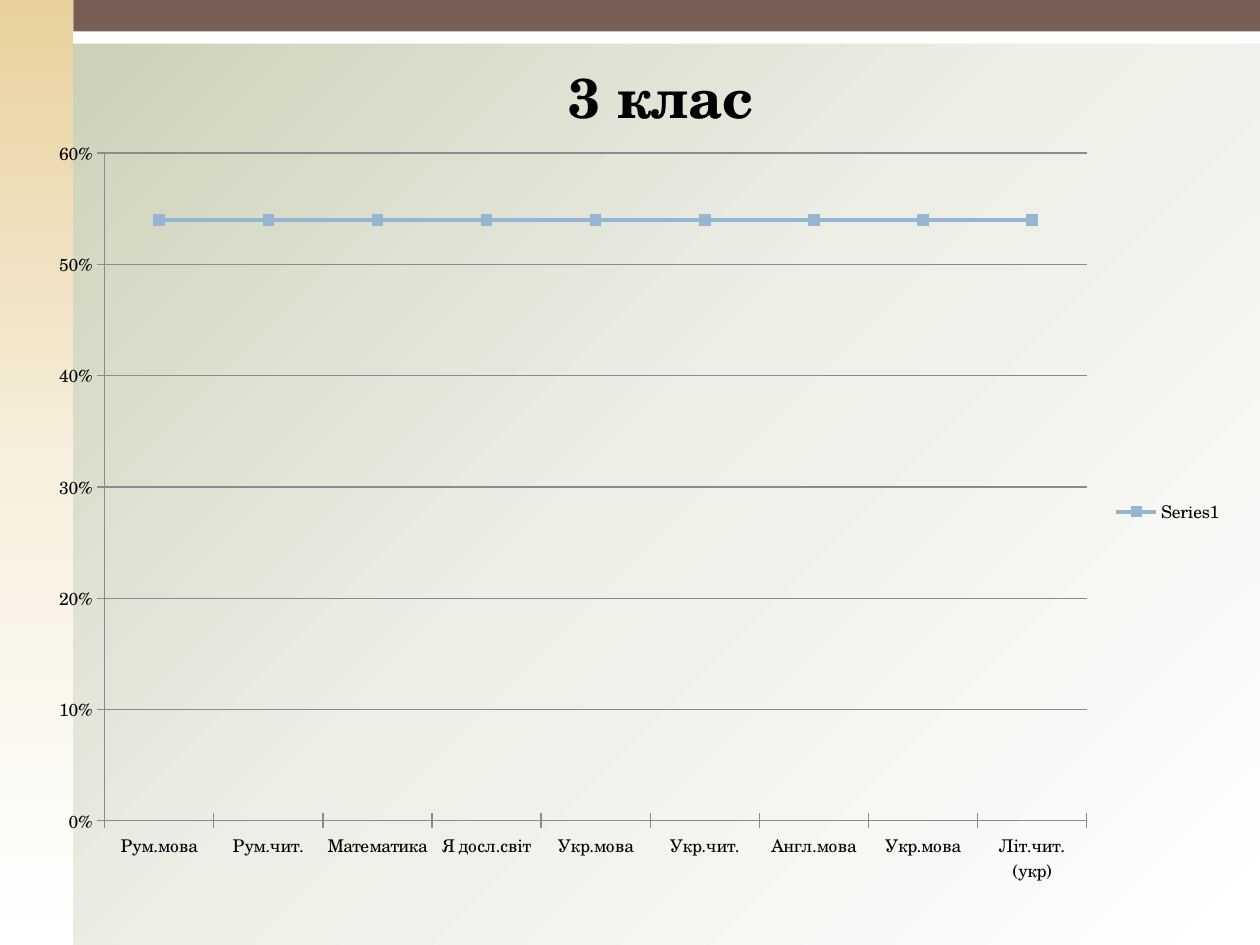
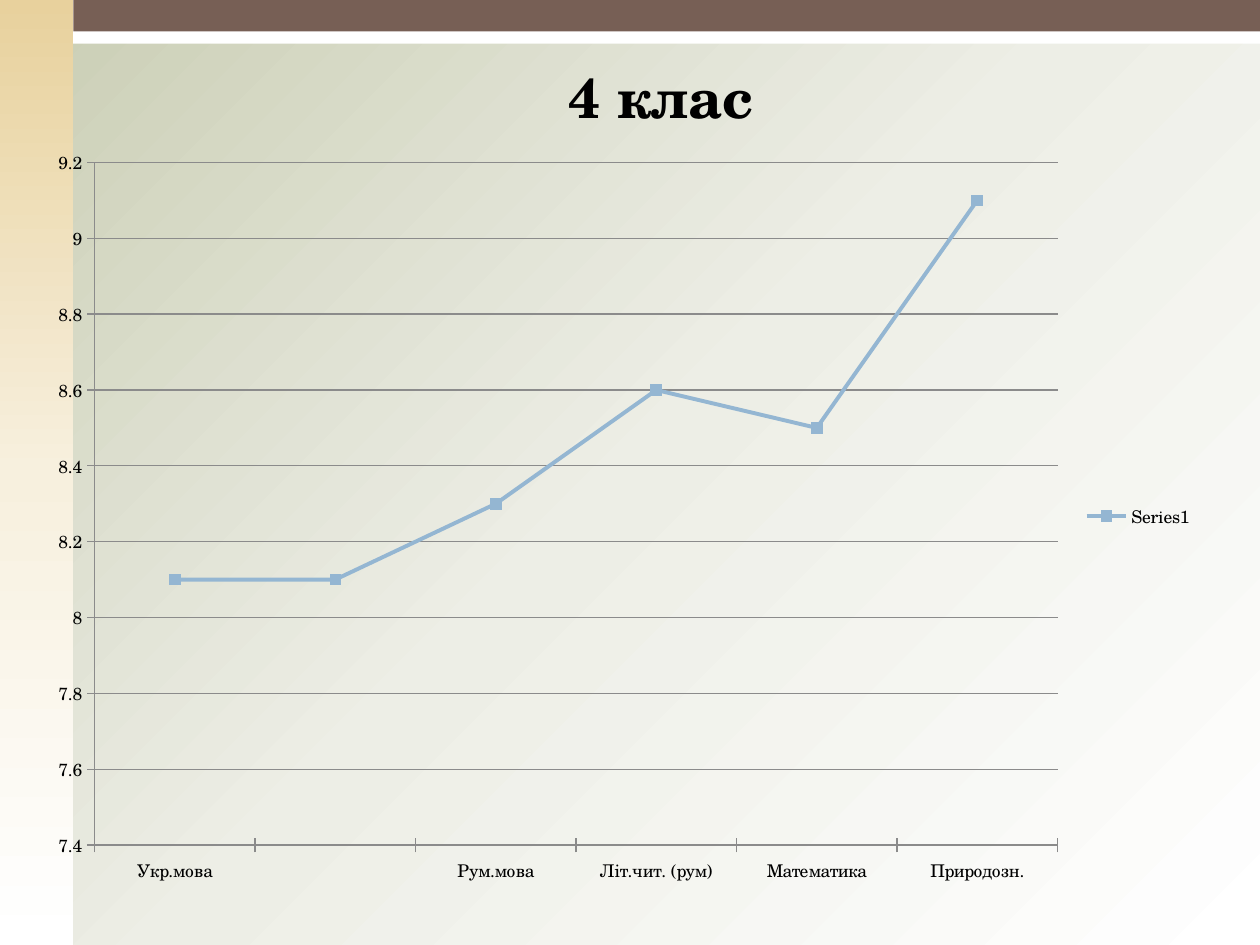
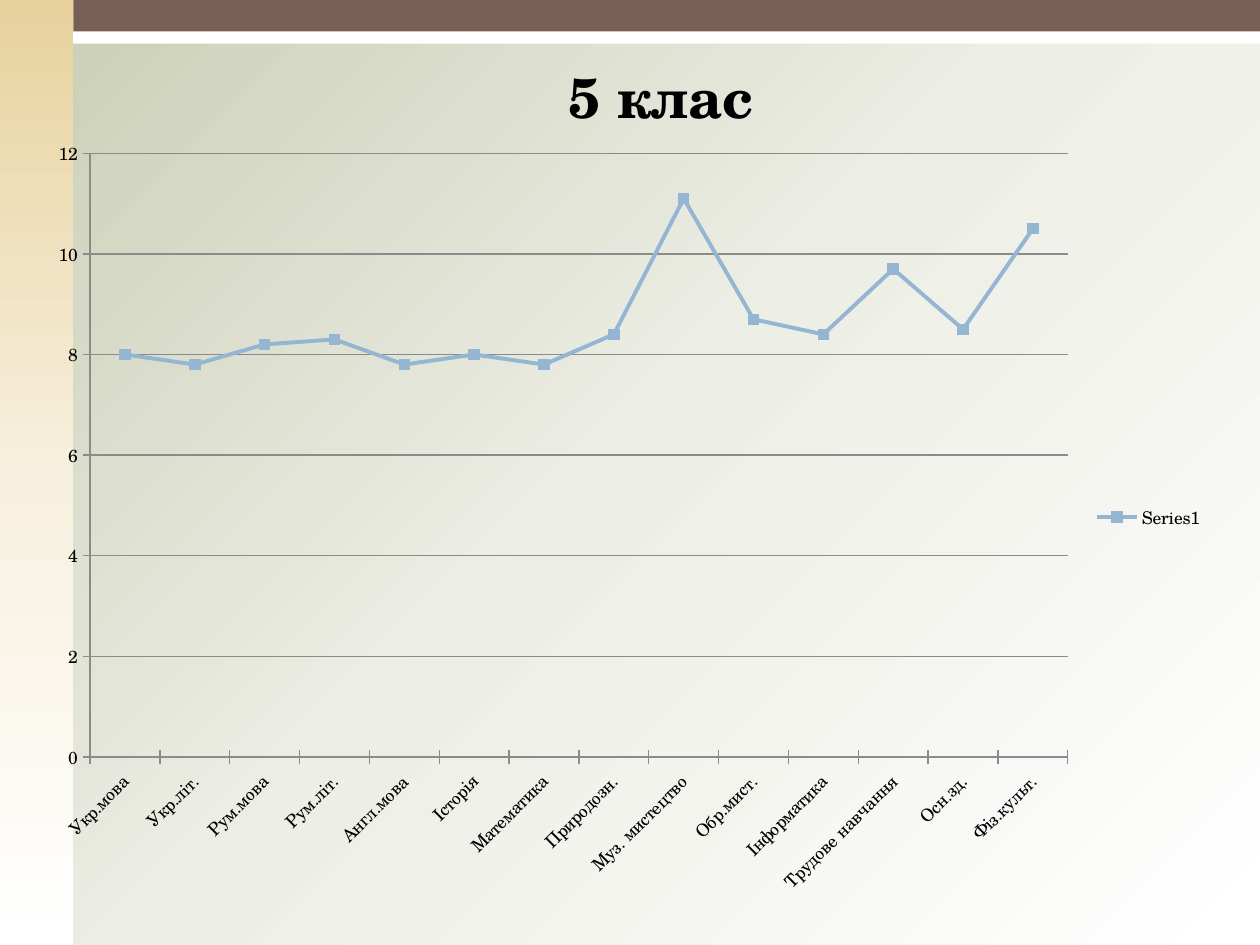
from copy import deepcopy

from pptx import Presentation
from pptx.chart.data import CategoryChartData
from pptx.dml.color import RGBColor
from pptx.enum.chart import XL_CHART_TYPE, XL_LEGEND_POSITION, XL_MARKER_STYLE, XL_TICK_MARK
from pptx.enum.shapes import MSO_SHAPE
from pptx.enum.text import PP_ALIGN
from pptx.oxml.ns import qn
from pptx.util import Pt

FONT = "TeX Gyre Schola"
BLACK = "000000"
WHITE = "FFFFFF"
BROWN = "775F55"
BLUE = "94B6D2"
GREY = "8B8B8B"
SAND_GRADIENT = ["E8D19D", "F7F0DE", WHITE]
SAGE_GRADIENT = ["C9CDB3", "EDEEE6", WHITE]
SLIDE_WIDTH, SLIDE_HEIGHT = 720, 540
SIDE_WIDTH = 42


def color(value):
    return RGBColor.from_string(value)


class Deck:
    def __init__(self):
        self.presentation = Presentation()
        self.presentation.slide_width = Pt(SLIDE_WIDTH)
        self.presentation.slide_height = Pt(SLIDE_HEIGHT)
        self.slide = None

    def add_slide(self):
        self.slide = self.presentation.slides.add_slide(self.presentation.slide_layouts[6])
        self.gradient(self.slide.background.fill, self.slide.element, SAGE_GRADIENT, 315)
        self.band(0, 0, SLIDE_WIDTH, 25, WHITE)
        side = self.band(0, 0, SIDE_WIDTH, SLIDE_HEIGHT, WHITE)
        self.gradient(side.fill, side.element, SAND_GRADIENT, 270)
        self.band(SIDE_WIDTH, 0, SLIDE_WIDTH - SIDE_WIDTH, 18, BROWN)

    def gradient(self, fill, element, colors, angle):
        fill.gradient()
        fill.gradient_angle = angle
        stop_list = element.find(".//" + qn("a:gsLst"))
        stop_list.insert(1, deepcopy(stop_list[0]))
        for index, (stop, value) in enumerate(zip(fill.gradient_stops, colors)):
            stop.color.rgb = color(value)
            stop.position = index / 2

    def band(self, left, top, width, height, fill_color):
        shape = self.slide.shapes.add_shape(
            MSO_SHAPE.RECTANGLE, Pt(left), Pt(top), Pt(width), Pt(height))
        shape.shadow.inherit = False
        shape.fill.solid()
        shape.fill.fore_color.rgb = color(fill_color)
        shape.line.fill.background()
        return shape

    def title(self, text):
        frame = self.slide.shapes.add_textbox(Pt(63), Pt(32), Pt(630), Pt(87)).text_frame
        frame.word_wrap = True
        paragraph = frame.paragraphs[0]
        paragraph.text = text
        paragraph.alignment = PP_ALIGN.CENTER
        paragraph.space_before = Pt(7)
        paragraph.font.name = FONT
        paragraph.font.size = Pt(32)
        paragraph.font.bold = True
        paragraph.font.color.rgb = color(BLACK)

    def line_chart(self, box, marks, scale, number_format="General", label_angle=None):
        data = CategoryChartData(number_format=number_format)
        data.categories = [subject for subject, mark in marks]
        data.add_series("Series1", [mark for subject, mark in marks])
        chart = self.slide.shapes.add_chart(
            XL_CHART_TYPE.LINE_MARKERS_STACKED, *map(Pt, box), data).chart
        chart.has_title = False
        chart.font.name = FONT
        chart.font.size = Pt(10)
        chart.font.color.rgb = color(BLACK)
        chart.has_legend = True
        chart.legend.position = XL_LEGEND_POSITION.RIGHT
        chart.legend.include_in_layout = False
        plot = chart.plots[0]
        plot.vary_by_categories = False
        self.style_series(plot.series[0])
        self.style_axes(chart, scale, number_format)
        if label_angle is not None:
            labels = chart.category_axis.tick_labels
            labels.font.size = Pt(10)
            body = chart.category_axis.format.line and chart.category_axis.tick_labels
            properties = chart.element.find(".//" + qn("c:catAx")).find(
                qn("c:txPr")).find(qn("a:bodyPr"))
            properties.set("rot", str(label_angle * 60000))

    def style_series(self, series):
        series.smooth = False
        series.format.line.color.rgb = color(BLUE)
        series.format.line.width = Pt(2.25)
        series.marker.style = XL_MARKER_STYLE.SQUARE
        series.marker.size = 6
        series.marker.format.fill.solid()
        series.marker.format.fill.fore_color.rgb = color(BLUE)
        series.marker.format.line.color.rgb = color(BLUE)

    def style_axes(self, chart, scale, number_format):
        value_axis = chart.value_axis
        value_axis.minimum_scale, value_axis.maximum_scale, value_axis.major_unit = scale
        value_axis.has_major_gridlines = True
        value_axis.tick_labels.number_format = number_format
        value_axis.tick_labels.number_format_is_linked = False
        for axis in (chart.category_axis, value_axis):
            axis.major_tick_mark = XL_TICK_MARK.CROSS
        for part in (chart.category_axis, value_axis, value_axis.major_gridlines):
            part.format.line.color.rgb = color(GREY)
            part.format.line.width = Pt(0.75)


def third_grade(deck):
    subjects = ["Рум.мова", "Рум.чит.", "Математика", "Я досл.світ", "Укр.мова",
                "Укр.чит.", "Англ.мова", "Укр.мова", "Літ.чит.(укр)"]
    deck.add_slide()
    deck.title("3 клас")
    deck.line_chart((20, 71.5, 686, 442), [(subject, 0.54) for subject in subjects],
                    (0, 0.6, 0.1), "0%")


def fourth_grade(deck):
    marks = [("Укр.мова", 8.1), ("", 8.1), ("Рум.мова", 8.3),
             ("Літ.чит. (рум)", 8.6), ("Математика", 8.5), ("Природозн.", 9.1)]
    deck.add_slide()
    deck.title("4 клас")
    deck.line_chart((20, 77, 669, 436), marks, (7.4, 9.2, 0.2))


def fifth_grade(deck):
    marks = [("Укр.мова", 8), ("Укр.літ.", 7.8), ("Рум.мова", 8.2), ("Рум.літ.", 8.3),
             ("Англ.мова", 7.8), ("Історія", 8), ("Математика", 7.8), ("Природозн.", 8.4),
             ("Муз. мистецтво", 11.1), ("Обр.мист.", 8.7), ("Інформатика", 8.4),
             ("Трудове навчання", 9.7), ("Осн.зд.", 8.5), ("Фіз.культ.", 10.5)]
    deck.add_slide()
    deck.title("5 клас")
    deck.line_chart((20, 71.5, 675, 448), marks, (0, 12, 2), label_angle=-45)


def main():
    deck = Deck()
    third_grade(deck)
    fourth_grade(deck)
    fifth_grade(deck)
    deck.presentation.save("out.pptx")


if __name__ == "__main__":
    main()
